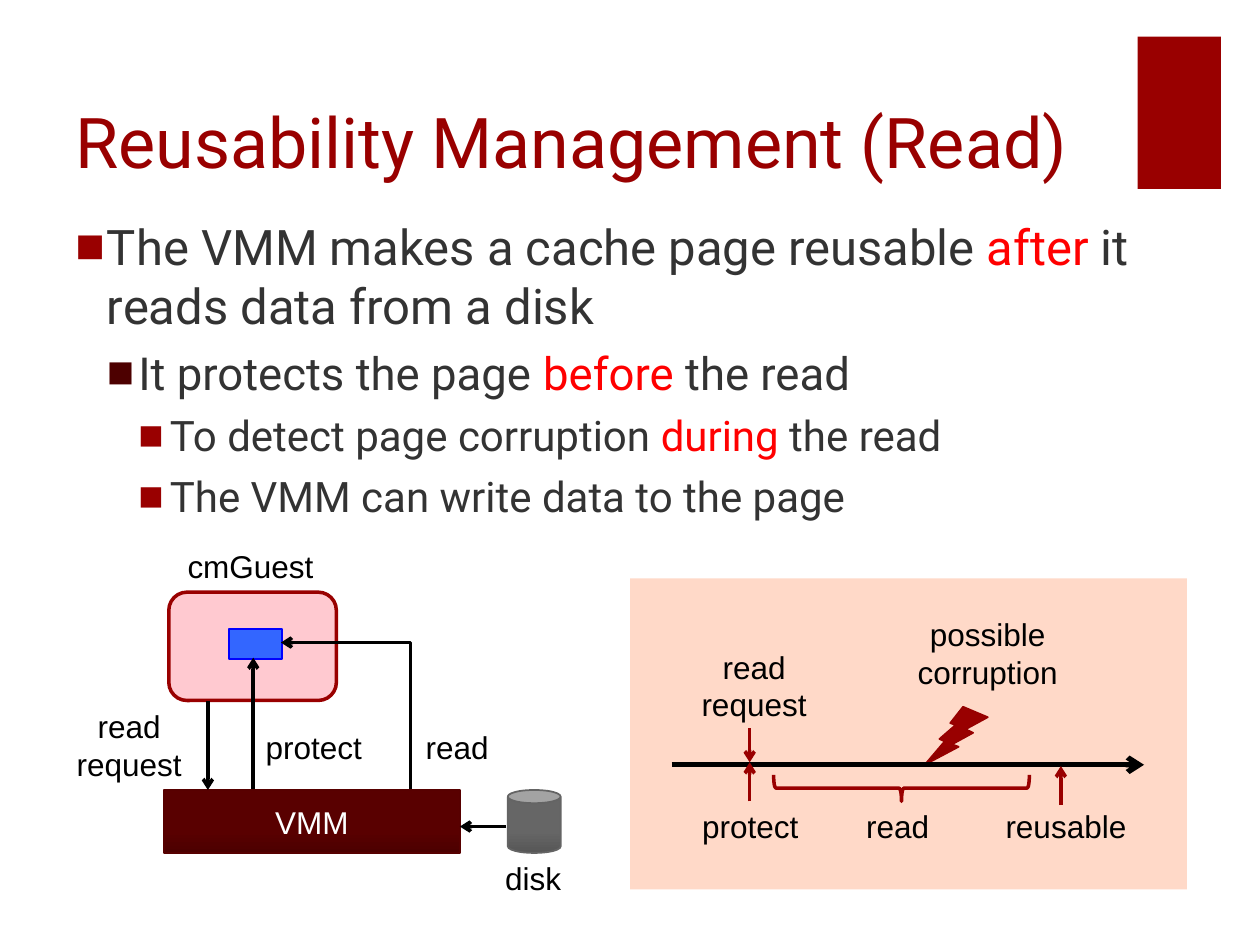
from dataclasses import dataclass
from lxml import etree
from pptx import Presentation
from pptx import util as u
from pptx.dml.color import RGBColor
from pptx.enum import shapes, text
from pptx.oxml.ns import qn

KIND = shapes.MSO_SHAPE
ALIGN = text.PP_ALIGN
ANCHOR = text.MSO_ANCHOR


@dataclass(frozen=True)
class Theme:
    heading_font: str = "Roboto"
    label_font: str = "Arial"
    title_size: int = 40
    body_sizes: tuple = (28, 26, 24)
    label_size: int = 18
    accent: str = "990000"
    ink: str = "333333"
    highlight: str = "FF0000"
    black: str = "000000"
    white: str = "FFFFFF"
    bullets: tuple = ("990000", "4D0000", "990000")
    panel: str = "FFD9C8"
    guest: str = "FFC9D0"
    page: str = "3366FF"
    page_line: str = "0000FF"
    vmm: tuple = ("4C0000", "590000")
    vmm_line: str = "570000"
    disk: tuple = ("575757", "666666")
    disk_line: str = "646464"
    bolt: tuple = ("830000", "990000")
    bolt_line: str = "960000"


class SlideBuilder:
    def __init__(self, slide, theme):
        self.slide = slide
        self.theme = theme

    def run(self, paragraph, content, size, color, font):
        run = paragraph.add_run()
        run.text = content
        run.font.size = u.Pt(size)
        run.font.name = font
        run.font.color.rgb = RGBColor.from_string(color)

    def frame(self, box, wrap=True, anchor=ANCHOR.TOP):
        shape = self.slide.shapes.add_textbox(*map(u.Inches, box))
        shape.text_frame.word_wrap = wrap
        shape.text_frame.vertical_anchor = anchor
        return shape.text_frame

    def title(self, content, box):
        paragraph = self.frame(box, anchor=ANCHOR.BOTTOM).paragraphs[0]
        self.run(paragraph, content, self.theme.title_size, self.theme.accent,
                 self.theme.heading_font)

    def bullets(self, items, box):
        frame = self.frame(box)
        for index, (level, parts) in enumerate(items):
            paragraph = frame.add_paragraph() if index else frame.paragraphs[0]
            paragraph.level = level
            paragraph.space_before = u.Pt(6 if level else 18)
            properties = paragraph._p.get_or_add_pPr()
            properties.set("marL", str(u.Inches(0.25 * (level + 1))))
            properties.set("indent", str(u.Inches(-0.25)))
            color = etree.SubElement(properties, qn("a:buClr"))
            etree.SubElement(color, qn("a:srgbClr"), val=self.theme.bullets[level])
            etree.SubElement(properties, qn("a:buFont"), typeface=self.theme.label_font)
            etree.SubElement(properties, qn("a:buChar"), char="■")
            for position, content in enumerate(parts):
                ink = self.theme.highlight if position % 2 else self.theme.ink
                self.run(paragraph, content, self.theme.body_sizes[level], ink,
                         self.theme.heading_font)

    def label(self, lines, box, align=ALIGN.CENTER):
        frame = self.frame(box, wrap=False)
        frame.auto_size = text.MSO_AUTO_SIZE.SHAPE_TO_FIT_TEXT
        for index, line in enumerate(lines):
            paragraph = frame.add_paragraph() if index else frame.paragraphs[0]
            paragraph.alignment = align
            self.run(paragraph, line, self.theme.label_size, self.theme.black,
                     self.theme.label_font)

    def shape(self, kind, box, fill=None, line=None, width=1, caption=None):
        shape = self.slide.shapes.add_shape(kind, *map(u.Inches, box))
        shape.shadow.inherit = False
        if fill is None:
            shape.fill.background()
        elif isinstance(fill, tuple):
            shape.fill.gradient()
            shape.fill.gradient_angle = 90
            for stop, color, position in zip(shape.fill.gradient_stops, fill, (0, 0.35)):
                stop.color.rgb = RGBColor.from_string(color)
                stop.position = position
        else:
            shape.fill.solid()
            shape.fill.fore_color.rgb = RGBColor.from_string(fill)
        if line:
            shape.line.color.rgb = RGBColor.from_string(line)
            shape.line.width = u.Pt(width)
        else:
            shape.line.fill.background()
        if caption:
            shape.text_frame.vertical_anchor = ANCHOR.MIDDLE
            paragraph = shape.text_frame.paragraphs[0]
            paragraph.alignment = ALIGN.CENTER
            self.run(paragraph, caption, self.theme.label_size, self.theme.white,
                     self.theme.label_font)
        return shape

    def arrow(self, start, end, color, width=2, bent=False):
        kind = shapes.MSO_CONNECTOR.ELBOW if bent else shapes.MSO_CONNECTOR.STRAIGHT
        connector = self.slide.shapes.add_connector(kind, *map(u.Inches, start + end))
        connector.line.color.rgb = RGBColor.from_string(color)
        connector.line.width = u.Pt(width)
        properties = connector._element.spPr
        if bent:
            properties.find(qn("a:prstGeom")).set("prst", "bentConnector2")
        tip = "a:headEnd" if bent else "a:tailEnd"
        etree.SubElement(properties.find(qn("a:ln")), qn(tip), type="arrow")
        etree.SubElement(properties, qn("a:effectLst"))


theme = Theme()
presentation = Presentation()
presentation.slide_width = u.Inches(10)
presentation.slide_height = u.Inches(7.5)
builder = SlideBuilder(presentation.slides.add_slide(presentation.slide_layouts[6]), theme)

builder.shape(KIND.RECTANGLE, (9.03, 0.29, 0.66, 1.21), theme.accent)
builder.title("Reusability Management (Read)", (0.5, 0.25, 8.42, 1.25))
builder.bullets([
    (0, ("The VMM makes a cache page reusable ", "after", " it reads data from a disk")),
    (1, ("It protects the page ", "before", " the read")),
    (2, ("To detect page corruption ", "during", " the read")),
    (2, ("The VMM can write data to the page",)),
], (0.5, 1.67, 8.92, 5.28))

builder.shape(KIND.RECTANGLE, (1.3, 6.27, 2.35, 0.5), theme.vmm, theme.vmm_line, caption="VMM")
builder.shape(KIND.CAN, (4.03, 6.27, 0.42, 0.5), theme.disk, theme.disk_line)
builder.shape(KIND.ROUNDED_RECTANGLE, (1.34, 4.7, 1.33, 0.86), theme.guest, theme.accent, 2)
builder.shape(KIND.RECTANGLE, (1.82, 4.99, 0.42, 0.24), theme.page, theme.page_line)
builder.shape(KIND.RECTANGLE, (5, 4.59, 4.42, 2.47), theme.panel)

bolt = builder.shape(KIND.LIGHTNING_BOLT, (7.34, 5.61, 0.5, 0.46), theme.bolt, theme.bolt_line)
bolt._element.spPr.find(qn("a:xfrm")).set("flipH", "1")
brace = builder.shape(KIND.LEFT_BRACE, (7.05, 5.24, 0.21, 2.03), line=theme.accent, width=2)
brace.rotation = 270

for start, end, color, width in [
    ((1.65, 5.56), (1.65, 6.27), theme.black, 2),
    ((2.01, 6.26), (2.01, 5.22), theme.black, 2),
    ((4.02, 6.56), (3.65, 6.56), theme.black, 2),
    ((5.33, 6.07), (9.08, 6.07), theme.black, 3),
    ((5.95, 5.78), (5.95, 6.05), theme.accent, 2),
    ((5.95, 6.36), (5.95, 6.05), theme.accent, 2),
    ((8.42, 6.39), (8.42, 6.08), theme.accent, 2),
]:
    builder.arrow(start, end, color, width)
builder.arrow((2.23, 5.1), (3.26, 6.26), theme.black, bent=True)

for lines, box in [
    (("read", "request"), (0.46, 5.56, 1.13, 0.71)),
    (("read", "request"), (5.42, 5.09, 1.13, 0.71)),
    (("possible", "corruption"), (7.11, 4.83, 1.46, 0.71)),
    (("protect",), (5.42, 6.36, 1.07, 0.4)),
    (("read",), (6.75, 6.36, 0.75, 0.4)),
    (("reusable",), (7.84, 6.36, 1.24, 0.4)),
]:
    builder.label(lines, box)
for word, box in [
    ("cmGuest", (1.39, 4.29, 1.23, 0.4)),
    ("protect", (2.01, 5.73, 1.07, 0.4)),
    ("read", (3.28, 5.73, 0.75, 0.4)),
    ("disk", (3.91, 6.77, 0.68, 0.4)),
]:
    builder.label((word,), box, ALIGN.LEFT)

presentation.save("out.pptx")
